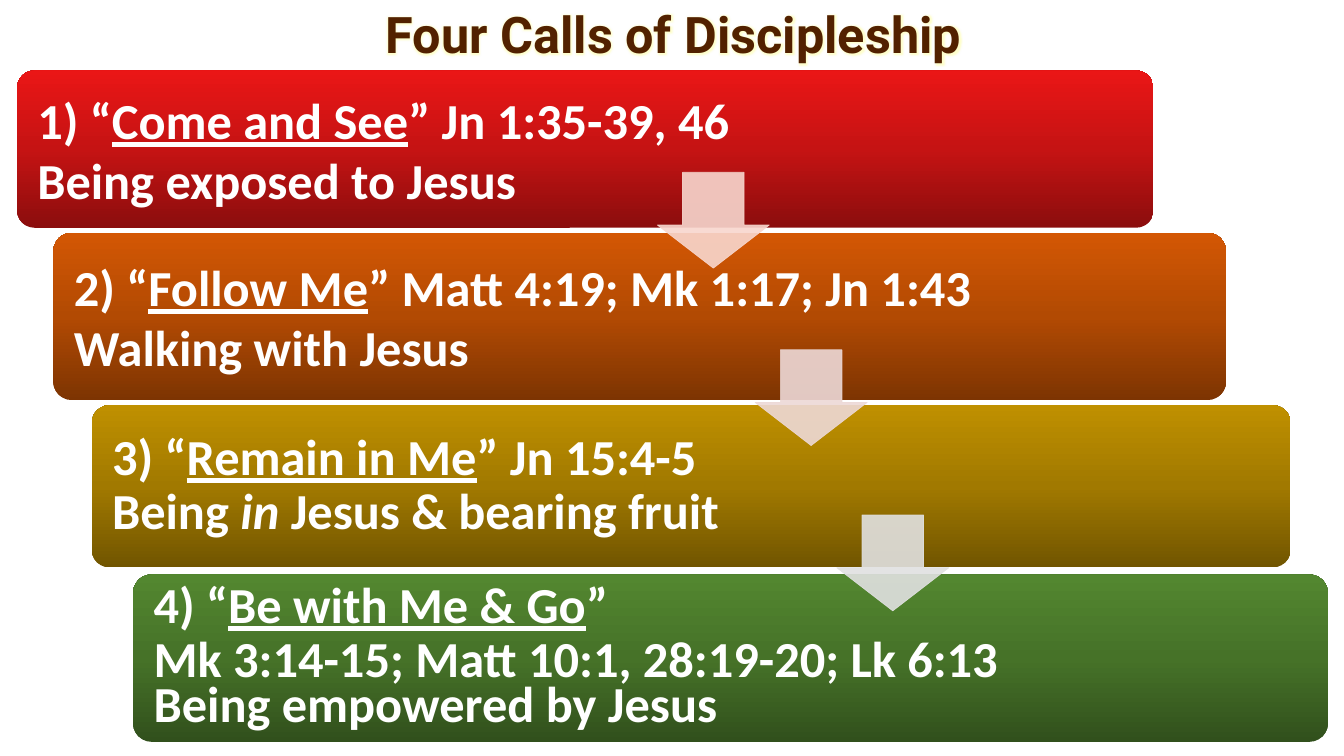
from copy import deepcopy
from lxml.etree import SubElement
from pptx import Presentation
from pptx.dml.color import RGBColor
from pptx.enum.shapes import MSO_SHAPE
from pptx.enum.text import MSO_ANCHOR, PP_ALIGN
from pptx.oxml.ns import qn
from pptx.util import Pt

SCALE = 9144
WHITE = RGBColor(0xFF, 0xFF, 0xFF)
BROWN = RGBColor(0x52, 0x21, 0x00)
CREAM = RGBColor(0xFF, 0xFF, 0xCC)
RED = [RGBColor(0x8B, 0x0D, 0x0D), RGBColor(0xC5, 0x13, 0x13), RGBColor(0xEA, 0x16, 0x16)]
ORANGE = [RGBColor(0x7D, 0x34, 0x02), RGBColor(0xB2, 0x4A, 0x03), RGBColor(0xD3, 0x57, 0x04)]
GOLD = [RGBColor(0x71, 0x55, 0x00), RGBColor(0xA1, 0x79, 0x00), RGBColor(0xBF, 0x90, 0x00)]
GREEN = [RGBColor(0x31, 0x50, 0x1C), RGBColor(0x46, 0x72, 0x28), RGBColor(0x53, 0x87, 0x30)]
PINK = RGBColor(0xF8, 0xD7, 0xCE)
ROSE = RGBColor(0xED, 0xD9, 0xD7)
GREY = RGBColor(0xE1, 0xE1, 0xE1)

CALLS = [
    ((17, 70, 1127, 156), RED, [
        ([("1) “", ""), ("Come and See", "u"), ("” Jn 1:35-39, 46", "")], 1.0, 0),
        ([("Being exposed to Jesus", "")], 1.0, 0)]),
    ((53, 231, 1163, 166), ORANGE, [
        ([("2) “", ""), ("Follow Me", "u"), ("” Matt 4:19; Mk 1:17; Jn 1:43", "")], 1.0, 0),
        ([("Walking with Jesus", "")], 1.0, 0)]),
    ((91, 402, 1189, 161), GOLD, [
        ([("3) “", ""), ("Remain in Me", "u"), ("” Jn 15:4-5", "")], 0.9, 0),
        ([("Being ", ""), ("in ", "i"), ("Jesus & bearing fruit", "")], 0.9, 0)]),
    ((132, 570, 1185, 166), GREEN, [
        ([("4) “", ""), ("Be with Me & Go", "u"), ("”", "")], 0.8, 6),
        ([("Mk 3:14-15; Matt 10:1, 28:19-20; Lk 6:13", "")], 0.75, 0),
        ([("Being empowered by Jesus", "")], 0.75, 0)]),
]
ARROWS = [((652, 171, 111, 95), PINK), ((749, 347, 111, 95), ROSE), ((830, 511, 111, 95), GREY)]


def px(*sizes):
    return [size * SCALE for size in sizes]


def style(run, face, color):
    run.font.size = Pt(36)
    run.font.bold = True
    run.font.name = face
    run.font.color.rgb = color


def add_title(slide, box):
    frame = slide.shapes.add_textbox(*px(*box)).text_frame
    frame.word_wrap = True
    frame.text = "Four Calls of Discipleship"
    line = frame.paragraphs[0]
    line.alignment = PP_ALIGN.CENTER
    line.line_spacing = 0.7
    run = line.runs[0]
    style(run, "Roboto", BROWN)
    effects = run.font._element.find(qn("a:solidFill"))
    holder = SubElement(run.font._element, qn("a:effectLst"))
    effects.addnext(holder)
    glow = SubElement(holder, qn("a:glow"), rad="63500")
    SubElement(glow, qn("a:srgbClr"), val=str(CREAM))


def shade(shape, colors):
    fill = shape.fill
    fill.gradient()
    fill.gradient_angle = 90
    stops = shape._element.spPr.find(qn("a:gradFill")).find(qn("a:gsLst"))
    stops.append(deepcopy(stops[0]))
    for index, color in enumerate(colors):
        stop = fill.gradient_stops[index]
        stop.color.rgb = color
        stop.position = index / 2


def add_call(slide, box, colors, lines):
    shape = slide.shapes.add_shape(MSO_SHAPE.ROUNDED_RECTANGLE, *px(*box))
    shape.adjustments[0] = 0.11
    shape.shadow.inherit = False
    shape.line.fill.background()
    shade(shape, colors)
    frame = shape.text_frame
    frame.word_wrap = True
    frame.vertical_anchor = MSO_ANCHOR.MIDDLE
    frame.margin_left, frame.margin_top, frame.margin_right, frame.margin_bottom = px(15, 15, 198, 15)
    for index, (parts, spacing, after) in enumerate(lines):
        line = frame.add_paragraph() if index else frame.paragraphs[0]
        line.alignment = PP_ALIGN.LEFT
        line.line_spacing = spacing
        line.space_after = Pt(after)
        for text, mark in parts:
            run = line.add_run()
            run.text = text
            style(run, "Calibri", WHITE)
            run.font.underline = mark == "u"
            run.font.italic = mark == "i"


def add_arrow(slide, box, color):
    shape = slide.shapes.add_shape(MSO_SHAPE.DOWN_ARROW, *px(*box))
    shape.adjustments[0] = 0.55
    shape.adjustments[1] = 0.45
    shape.shadow.inherit = False
    shape.fill.solid()
    shape.fill.fore_color.rgb = color
    shape.line.color.rgb = color
    shape.line.width = Pt(0.5)
    for tint in shape._element.spPr.iter(qn("a:srgbClr")):
        SubElement(tint, qn("a:alpha"), val="90000")


def main():
    deck = Presentation()
    deck.slide_width, deck.slide_height = px(1333, 750)
    slide = deck.slides.add_slide(deck.slide_layouts[6])
    add_title(slide, (273, 15, 790, 53))
    for call in CALLS:
        add_call(slide, *call)
    for arrow in ARROWS:
        add_arrow(slide, *arrow)
    deck.save("out.pptx")


if __name__ == "__main__":
    main()
